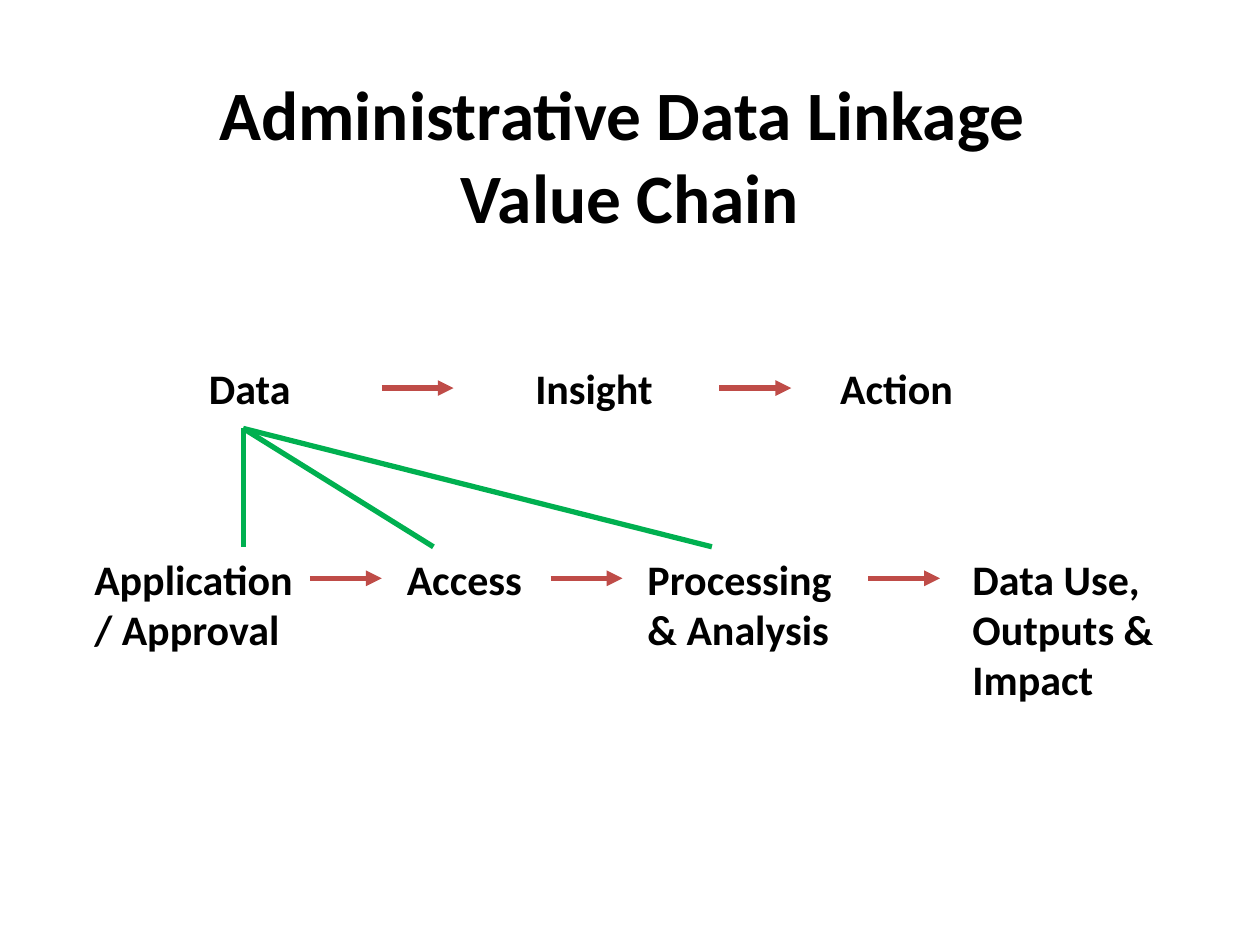
from dataclasses import dataclass

from lxml import etree
from pptx import Presentation, util as u
from pptx.dml.color import RGBColor
from pptx.enum import shapes, text
from pptx.oxml import ns


@dataclass(frozen=True)
class Theme:
    """Colours, font and type sizes of the slide."""
    ink: RGBColor = RGBColor(0x00, 0x00, 0x00)
    arrow: RGBColor = RGBColor(0xBF, 0x4C, 0x48)
    branch: RGBColor = RGBColor(0x00, 0xB0, 0x50)
    font: str = "Calibri"
    title: float = 39.6
    label: float = 24
    line: float = 3


THEME = Theme()
ARROW_LENGTH = 0.57


def add_run(p, wording, size):
    """Add a bold run in the theme font."""
    r = p.add_run()
    r.text = wording
    r.font.name, r.font.size, r.font.bold = THEME.font, u.Pt(size), True
    r.font.color.rgb = THEME.ink


def add_line(s, start, end, color, head=False):
    """Draw a straight line, with an arrowhead at its end if asked."""
    line = s.shapes.add_connector(
        shapes.MSO_CONNECTOR.STRAIGHT, *(u.Inches(v) for v in (*start, *end)))
    line.line.color.rgb = color
    line.line.width = u.Pt(THEME.line)
    if head:
        etree.SubElement(line.line._get_or_add_ln(), ns.qn("a:tailEnd"), type="triangle")
    etree.SubElement(line._element.spPr, ns.qn("a:effectLst"))


def add_title(s, box, lines):
    """Place the title and centre its lines in the box."""
    sp = s.shapes.title
    sp.left, sp.top, sp.width, sp.height = (u.Inches(v) for v in box)
    tf = sp.text_frame
    tf.auto_size = text.MSO_AUTO_SIZE.NONE
    tf.vertical_anchor = text.MSO_ANCHOR.MIDDLE
    p = tf.paragraphs[0]
    p.alignment = text.PP_ALIGN.CENTER
    for i, wording in enumerate(lines):
        if i:
            p.add_line_break()
        add_run(p, wording, THEME.title)


def add_chain(s, top, steps, arrows):
    """Place a row of step labels and the arrows between them."""
    for left, width, height, wording in steps:
        sp = s.shapes.add_textbox(*(u.Inches(v) for v in (left, top, width, height)))
        tf = sp.text_frame
        tf.word_wrap = True
        tf.auto_size = text.MSO_AUTO_SIZE.SHAPE_TO_FIT_TEXT
        add_run(tf.paragraphs[0], wording, THEME.label)
    y = top + 0.25
    for x in arrows:
        add_line(s, (x, y), (x + ARROW_LENGTH, y), THEME.arrow, head=True)


def add_branches(s, origin, bottom, ends):
    """Fan lines out from the origin to points along the bottom."""
    for x in ends:
        add_line(s, origin, (x, bottom), THEME.branch)


def main():
    """Build and save the slide."""
    prs = Presentation()
    prs.slide_width, prs.slide_height = u.Inches(10), u.Inches(7.5)
    s = prs.slides.add_slide(prs.slide_layouts[5])
    add_title(s, (0.5, 0.6, 9, 1.25), ("Administrative Data Linkage ", "Value Chain"))
    add_chain(s, 4.34, (
        (0.65, 1.81, 0.91, "Application / Approval"),
        (3.13, 1.81, 0.5, "Access"),
        (5.04, 1.68, 0.91, "Processing & Analysis"),
        (7.62, 1.67, 1.62, "Data Use, Outputs & Impact"),
    ), (2.46, 4.37, 6.89))
    add_chain(s, 2.83, (
        (1.56, 1.63, 0.5, "Data"),
        (4.15, 1.46, 0.5, "Insight"),
        (6.57, 1.68, 0.5, "Action"),
    ), (3.03, 5.71))
    add_branches(s, (1.93, 3.4), 4.34, (1.93, 5.65, 3.44))
    prs.save("out.pptx")


if __name__ == "__main__":
    main()
